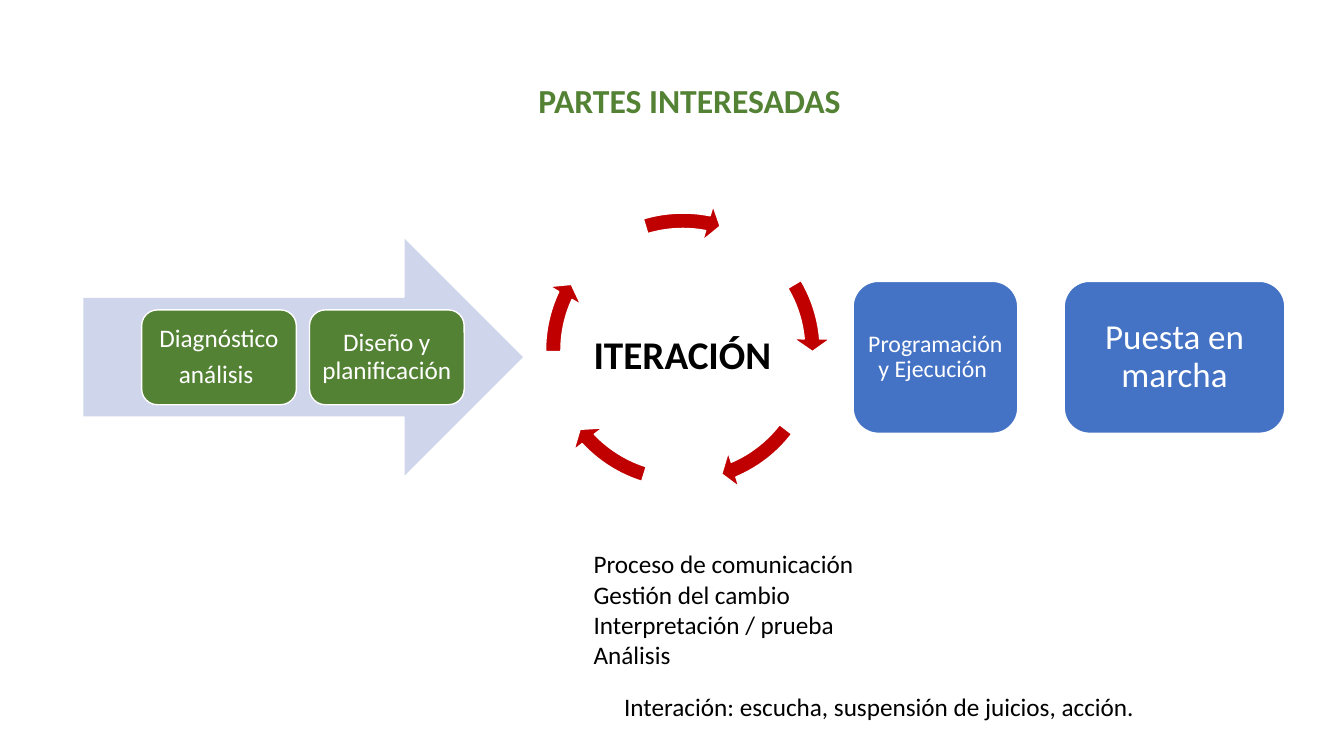
import pptx
import pptx.dml.color
import pptx.enum.shapes
import pptx.enum.text
import pptx.util

Cm = pptx.util.Cm
Pt = pptx.util.Pt
Shape = pptx.enum.shapes.MSO_SHAPE
GREEN, BLUE, RED = "548235", "4472C4", "C00000"
WHITE, BLACK, PALE = "FFFFFF", "000000", "CFD5EA"
CYCLE_ANGLES = [
    (212.956, 197.642),
    (40.171, 22.512),
    (82.135, 64.475),
    (123.005, 107.691),
    (168.681, 151.965),
]


def paint(target, color):
    """Give a fill or a line a solid colour."""
    target.solid()
    target.fore_color.rgb = pptx.dml.color.RGBColor.from_string(color)


def add_figure(page, kind, left, top, width, height, color, outline=WHITE):
    """Add a filled preset shape, outlined unless outline is None."""
    figure = page.shapes.add_shape(kind, Cm(left), Cm(top), Cm(width), Cm(height))
    figure.shadow.inherit = False
    paint(figure.fill, color)
    if outline:
        paint(figure.line.fill, outline)
        figure.line.width = Pt(1)
    else:
        figure.line.fill.background()
    return figure


def write(frame, text, size, color, bold=False):
    """Put text in a frame and format its runs."""
    frame.text = text
    for para in frame.paragraphs:
        for span in para.runs:
            span.font.name = "Calibri"
            span.font.size = Pt(size)
            span.font.bold = bold
            span.font.color.rgb = pptx.dml.color.RGBColor.from_string(color)


def add_label(page, left, top, width, height, text, size, color=BLACK, bold=False):
    """Add a left-aligned text box that does not wrap."""
    box = page.shapes.add_textbox(Cm(left), Cm(top), Cm(width), Cm(height))
    write(box.text_frame, text, size, color, bold)
    box.text_frame.word_wrap = False
    box.text_frame.auto_size = pptx.enum.text.MSO_AUTO_SIZE.SHAPE_TO_FIT_TEXT


def add_stage(page, left, top, width, height, color, text, size, inset=0.18):
    """Add a rounded box with centred text for one stage of the process."""
    stage = add_figure(page, Shape.ROUNDED_RECTANGLE, left, top, width, height, color)
    frame = stage.text_frame
    write(frame, text, size, WHITE)
    frame.word_wrap = True
    frame.vertical_anchor = pptx.enum.text.MSO_ANCHOR.MIDDLE
    frame.margin_left = frame.margin_right = Cm(inset)
    frame.margin_top = frame.margin_bottom = Cm(inset)
    for para in frame.paragraphs:
        para.alignment = pptx.enum.text.PP_ALIGN.CENTER
        para.line_spacing = 0.9
        para.space_after = Pt(size * 0.35)


def add_cycle(page, left, top, size):
    """Add the ring of curved arrows."""
    for head, tail in CYCLE_ANGLES:
        arrow = add_figure(page, Shape.CIRCULAR_ARROW, left, top, size, size, RED)
        for index, value in enumerate((0.052, 3.353, head, tail, 0.061)):
            arrow.adjustments[index] = value


def main():
    """Build the slide and save it."""
    deck = pptx.Presentation()
    deck.slide_width, deck.slide_height = Cm(33.87), Cm(19.05)
    page = deck.slides.add_slide(deck.slide_layouts[6])

    add_cycle(page, 13.49, 5.11, 7.44)
    add_label(page, 14.71, 8.2, 5.05, 1.45, "ITERACIÓN", 28, bold=True)

    add_figure(page, Shape.RIGHT_ARROW, 2.1, 6.02, 11.08, 5.96, PALE, None)
    add_stage(page, 3.57, 7.81, 3.9, 2.39, GREEN, "Diagnóstico\nanálisis ", 18)
    add_stage(page, 7.8, 7.81, 3.9, 2.39, GREEN, "Diseño y planificación ", 18)
    add_stage(page, 21.5, 7.09, 4.15, 3.83, BLUE, "Programación y Ejecución ", 17)
    add_stage(page, 26.82, 7.09, 5.56, 3.83, BLUE, "Puesta en marcha", 25, 0.25)

    topics = [
        "Proceso de comunicación",
        "Gestión del cambio",
        "Interpretación / prueba",
        "Análisis",
    ]
    add_label(page, 14.71, 13.7, 7.14, 3.33, "\n".join(topics), 18)
    interaction = "Interación: escucha, suspensión de juicios, acción."
    add_label(page, 15.48, 17.3, 13.5, 1.03, interaction, 18)
    add_label(page, 13.32, 1.89, 8.2, 1.28, "PARTES INTERESADAS", 24, GREEN, True)
    deck.save("out.pptx")


if __name__ == "__main__":
    main()
